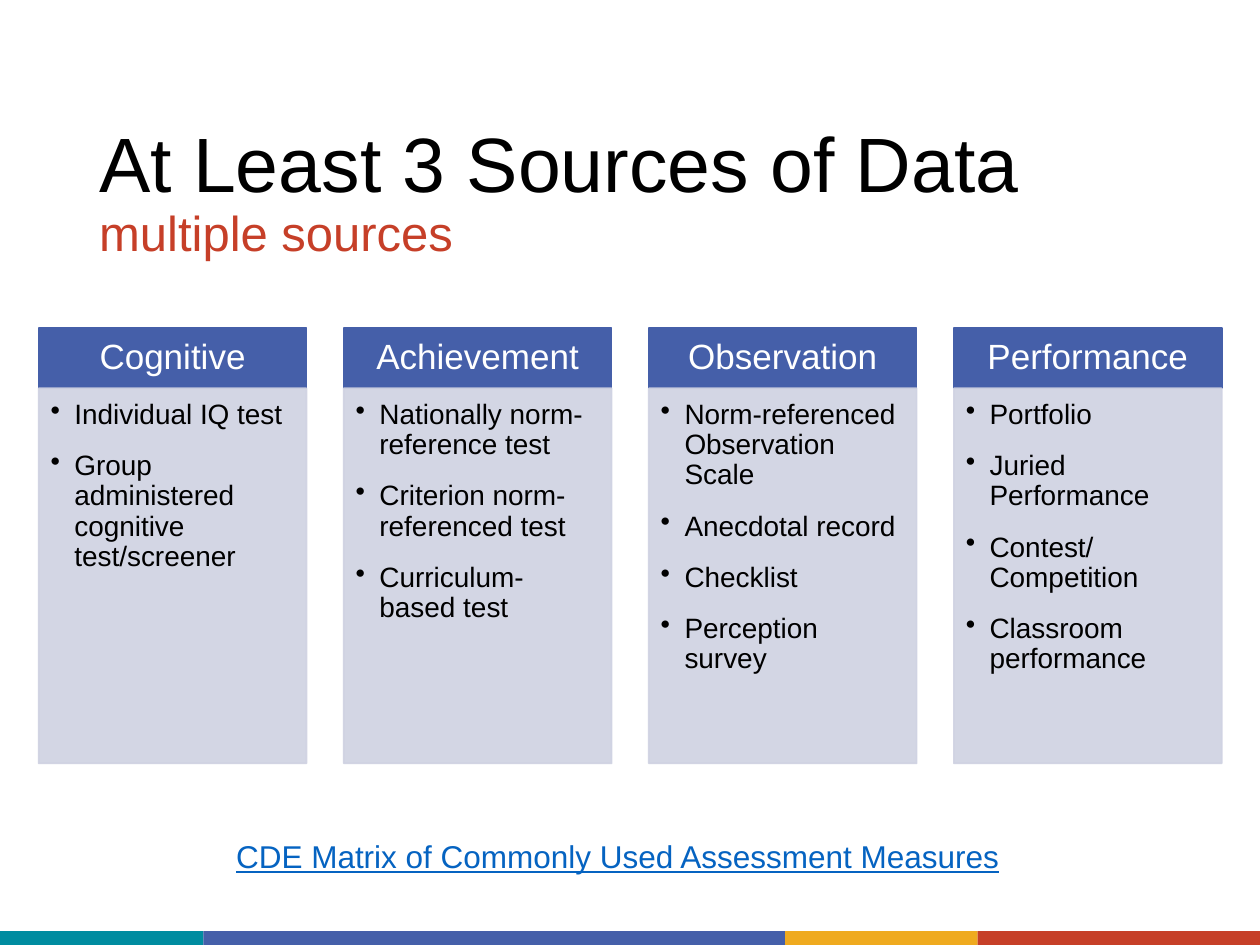
from lxml import etree
from pptx import Presentation
from pptx.dml.color import RGBColor
from pptx.enum.shapes import MSO_SHAPE
from pptx.enum.text import MSO_ANCHOR, MSO_AUTO_SIZE, PP_ALIGN
from pptx.oxml.ns import qn
from pptx.util import Cm, Pt

RECT = MSO_SHAPE.RECTANGLE
TOP, MIDDLE = MSO_ANCHOR.TOP, MSO_ANCHOR.MIDDLE
LEFT, CENTER = PP_ALIGN.LEFT, PP_ALIGN.CENTER
NO_FIT, GROW = MSO_AUTO_SIZE.NONE, MSO_AUTO_SIZE.SHAPE_TO_FIT_TEXT

BLUE, TEAL, GOLD, RED = "455FA9", "008CA0", "EFAA1F", "C63F28"
PALE, BLACK, WHITE, LINK = "CFD2E2", "000000", "FFFFFF", "0563C1"

LISTS = {
    "Cognitive": [
        "Individual IQ test",
        "Group administered cognitive test/screener",
    ],
    "Achievement": [
        "Nationally norm-reference test",
        "Criterion norm-referenced test",
        "Curriculum-based test",
    ],
    "Observation": [
        "Norm-referenced Observation Scale",
        "Anecdotal record",
        "Checklist",
        "Perception survey",
    ],
    "Performance": [
        "Portfolio",
        "Juried Performance",
        "Contest/Competition",
        "Classroom performance",
    ],
}


def color(code):
    return RGBColor.from_string(code)


def paint(fill, code, alpha=100):
    """Fill with a solid colour; alpha is the opacity in percent."""
    fill.solid()
    fill.fore_color.rgb = color(code)
    if alpha < 100:
        for tone in fill._xPr.iter(qn("a:srgbClr")):
            etree.SubElement(tone, qn("a:alpha"), val=str(alpha * 1000))


def write(para, text, size=18, tone=BLACK, font="Arial", under=None,
          align=LEFT, lead=None, after=None):
    """Add one formatted run to a paragraph."""
    para.alignment = align
    if lead:
        para.line_spacing = lead
    if after is not None:
        para.space_after = Pt(after)
    run = para.add_run()
    run.text = text
    run.font.name = font
    run.font.size = Pt(size)
    run.font.color.rgb = color(tone)
    run.font.underline = under


def bullet(para, indent):
    para.level = 1
    props = para._p.get_or_add_pPr()
    props.set("marL", str(indent))
    props.set("indent", str(-indent))
    etree.SubElement(props, qn("a:buChar"), char="•")


class Deck:
    def __init__(self):
        self.prs = Presentation()
        self.prs.slide_width = Cm(25.4)
        self.prs.slide_height = Cm(19.05)
        self.slide = self.prs.slides.add_slide(self.prs.slide_layouts[5])

    def frame(self, shape, anchor=TOP, pads=(0.25, 0.13, 0.25, 0.13),
              fit=NO_FIT):
        frame = shape.text_frame
        frame.word_wrap = True
        frame.auto_size = fit
        frame.vertical_anchor = anchor
        (frame.margin_left, frame.margin_top,
         frame.margin_right, frame.margin_bottom) = map(Cm, pads)
        return frame

    def title(self, box, main, sub):
        shape = self.slide.shapes.title
        shape.left, shape.top, shape.width, shape.height = map(Cm, box)
        para = self.frame(shape, MIDDLE).paragraphs[0]
        write(para, main, size=44, lead=0.9)
        para.add_line_break()
        write(para, sub, size=28, tone=RED, lead=0.9)

    def rect(self, box, code, alpha=100, line=False):
        shape = self.slide.shapes.add_shape(RECT, *map(Cm, box))
        shape.shadow.inherit = False
        paint(shape.fill, code, alpha)
        if line:
            paint(shape.line.fill, code, alpha)
            shape.line.width = Pt(1)
        else:
            shape.line.fill.background()
        return shape

    def head(self, box, text):
        shape = self.rect(box, BLUE, line=True)
        frame = self.frame(shape, MIDDLE, (0.4, 0.23, 0.4, 0.23))
        write(frame.paragraphs[0], text, size=20, tone=WHITE,
              align=CENTER, lead=0.9)

    def body(self, box, items):
        shape = self.rect(box, PALE, alpha=90, line=True)
        frame = self.frame(shape, TOP, (0.24, 0.24, 0.32, 0.36))
        for i, item in enumerate(items):
            para = frame.add_paragraph() if i else frame.paragraphs[0]
            write(para, item, size=16, lead=0.9, after=12)
            bullet(para, Cm(0.48))

    def label(self, box, text, **style):
        shape = self.slide.shapes.add_textbox(*map(Cm, box))
        frame = self.frame(shape, fit=GROW)
        write(frame.paragraphs[0], text, **style)


def main():
    deck = Deck()

    # Colour strip along the bottom edge
    left = 0
    for code, width in ((TEAL, 4.1), (BLUE, 11.73), (GOLD, 3.88), (RED, 5.69)):
        deck.rect((left, 18.77, width, 0.28), code)
        left += width

    # Title
    deck.title((1.75, 2.08, 21.9, 3.68),
               "At Least 3 Sources of Data", "multiple sources")

    # Four columns: a head above a list
    for i, (name, items) in enumerate(LISTS.items()):
        left = 0.78 + i * 6.15
        deck.head((left, 6.61, 5.4, 1.22), name)
        deck.body((left, 7.83, 5.4, 7.56), items)

    # Reference line
    deck.label((4.51, 16.74, 16.38, 1.02),
               "CDE Matrix of Commonly Used Assessment Measures",
               size=18, tone=LINK, under=True)

    deck.prs.save("out.pptx")


if __name__ == "__main__":
    main()
